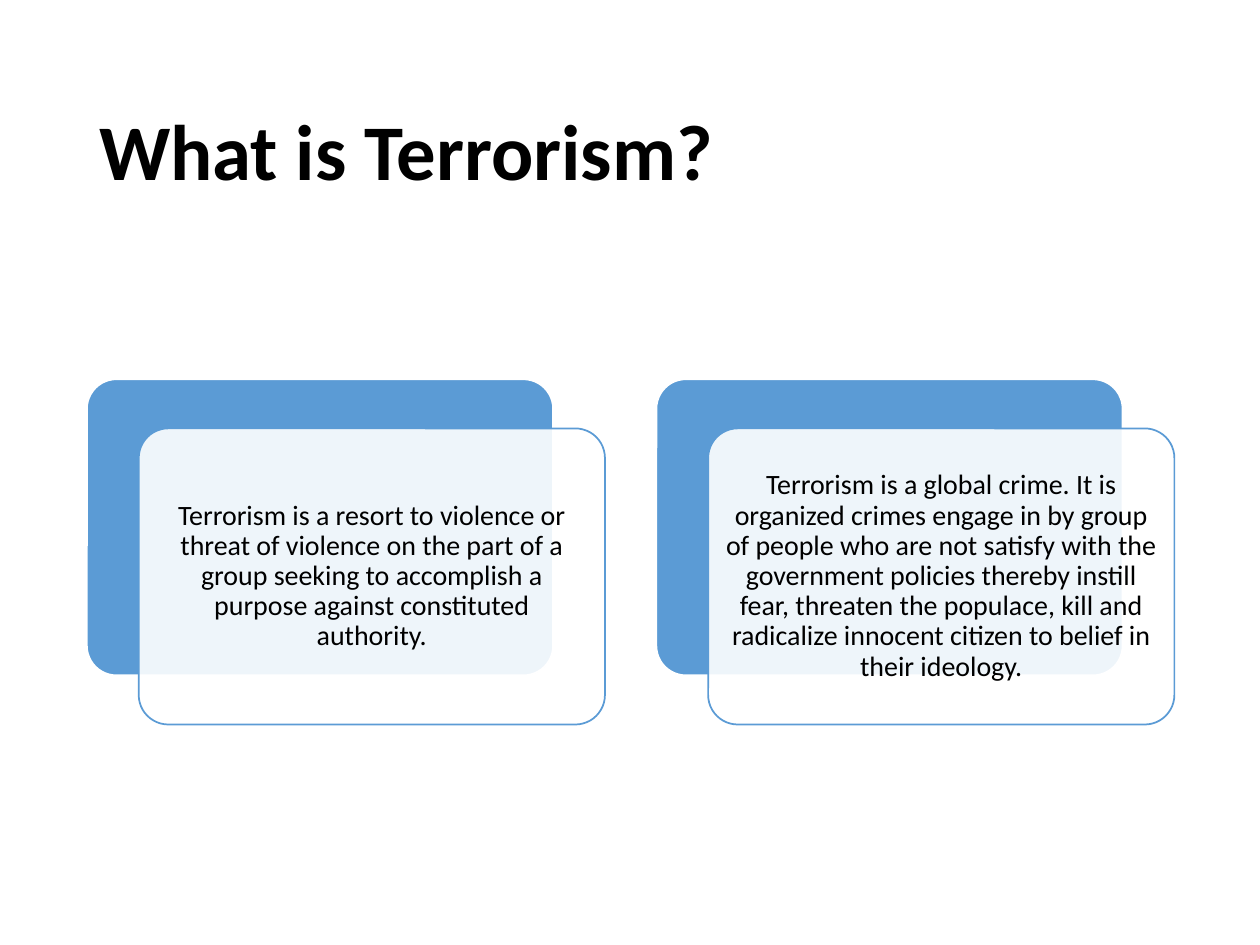
from lxml import etree
from pptx import Presentation
from pptx.dml.color import RGBColor
from pptx.enum import shapes, text
from pptx.oxml import ns
from pptx.util import Pt

COLORS = {"accent": "5B9BD5", "paper": "FFFFFF", "ink": "000000"}
CARD_SIZE = (266.4, 169.2)
FIRST_CARD = (49.7, 216.7)
CARD_PITCH = 325.4
FRONT_SHIFT = (29.6, 28.1)

DEFINITIONS = [
    "Terrorism is a resort to violence or threat of violence on the part of a "
    "group seeking to accomplish a purpose against constituted authority.",
    "Terrorism is a global crime. It is organized crimes engage in by group of "
    "people who are not satisfy with the government policies thereby instill "
    "fear, threaten the populace, kill and radicalize innocent citizen to "
    "belief in their ideology.",
]


def color(name):
    return RGBColor.from_string(COLORS[name])


def apply(target, values):
    for name, value in values.items():
        setattr(target, name, value)


def write(frame, words, frame_format, paragraph_format, font_format):
    apply(frame, {"word_wrap": True, "vertical_anchor": text.MSO_ANCHOR.MIDDLE,
                  **frame_format})
    paragraph = frame.paragraphs[0]
    apply(paragraph, {"line_spacing": 0.9, **paragraph_format})
    run = paragraph.add_run()
    run.text = words
    apply(run.font, {"name": "Calibri", **font_format})
    run.font.color.rgb = color("ink")


def add_title(slide, words):
    title = slide.shapes.title
    apply(title, {"left": Pt(49.5), "top": Pt(43.9),
                  "width": Pt(621), "height": Pt(89.3)})
    write(title.text_frame, words, {"auto_size": text.MSO_AUTO_SIZE.NONE},
          {"alignment": text.PP_ALIGN.LEFT}, {"size": Pt(45), "bold": True})


def add_panel(slide, left, top, fill, line):
    panel = slide.shapes.add_shape(
        shapes.MSO_SHAPE.ROUNDED_RECTANGLE,
        Pt(left), Pt(top), *map(Pt, CARD_SIZE))
    panel.adjustments[0] = 0.1
    panel.shadow.inherit = False
    panel.fill.solid()
    panel.fill.fore_color.rgb = color(fill)
    panel.line.color.rgb = color(line)
    panel.line.width = Pt(1)
    return panel


def set_opacity(panel, percent):
    fill_color = panel.fill._xPr.find(ns.qn("a:solidFill"))[0]
    alpha = etree.SubElement(fill_color, ns.qn("a:alpha"))
    alpha.set("val", str(percent * 1000))


def add_definition(slide, left, top, words):
    """Add a solid back panel and a translucent front panel with the words."""
    add_panel(slide, left, top, "accent", "paper")
    front = add_panel(slide, left + FRONT_SHIFT[0], top + FRONT_SHIFT[1],
                      "paper", "accent")
    set_opacity(front, 90)
    insets = {f"margin_{side}": Pt(5)
              for side in ("left", "top", "right", "bottom")}
    write(front.text_frame, words, insets,
          {"alignment": text.PP_ALIGN.CENTER, "space_after": Pt(5.6)},
          {"size": Pt(16)})


def main():
    deck = Presentation()
    apply(deck, {"slide_width": Pt(720), "slide_height": Pt(540)})
    slide = deck.slides.add_slide(deck.slide_layouts[5])
    add_title(slide, "What is Terrorism?")
    left, top = FIRST_CARD
    for column, words in enumerate(DEFINITIONS):
        add_definition(slide, left + column * CARD_PITCH, top, words)
    deck.save("out.pptx")


if __name__ == "__main__":
    main()
